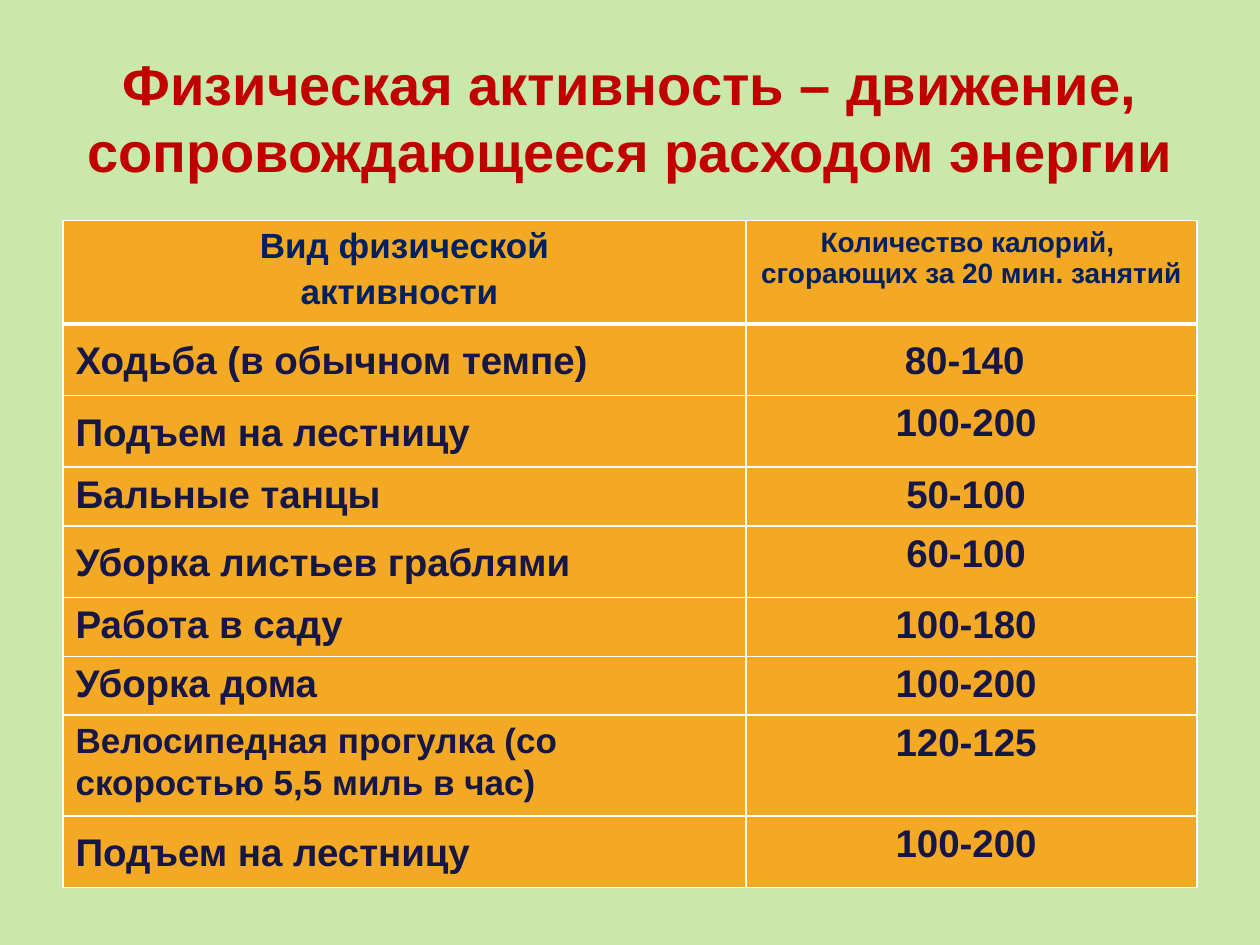
from pptx import Presentation
from pptx.dml.color import RGBColor as RGB
from pptx.enum.text import MSO_ANCHOR as Anchor, PP_ALIGN as Align
from pptx.oxml import parse_xml
from pptx.oxml.ns import nsdecls, qn
from pptx.util import Inches, Pt
from lxml.etree import SubElement

TITLE = "Физическая активность – движение, сопровождающееся расходом энергии"
HEADS = [
    ("Вид физической\nактивности ", 20),
    ("Количество калорий, \vсгорающих за 20 мин. занятий", 16),
]
ROWS = [
    ("Ходьба (в обычном темпе)", 22, 28, "80-140", 28),
    ("Подъем на лестницу", 22, 28, "100-200", 22),
    ("Бальные танцы", 22, None, "50-100", 22),
    ("Уборка листьев граблями", 22, 28, "60-100", 22),
    ("Работа в саду", 22, None, "100-180", 22),
    ("Уборка дома", 22, None, "100-200", 22),
    ("Велосипедная прогулка (со скоростью 5,5 миль в час)", 20, 22, "120-125", 22),
    ("Подъем на лестницу", 22, 28, "100-200", 22),
]
COLS = [5.42, 3.58]
HIGH = [0.78, 0.54, 0.53, 0.44, 0.53, 0.44, 0.44, 0.75, 0.54]
THEME = {
    "font": "Arial", "back": "CAE8AA", "title": "C00000", "head": "002060",
    "body": "171745", "fill": "FF9900", "alpha": 79, "line": "FFFFFF",
    "title_size": 32, "num_size": 22, "thin": 1, "thick": 3,
}


def style(run, size, color, bold=True):
    """Set the font of one run."""
    font = run.font
    font.name, font.size, font.bold = THEME["font"], Pt(size), bold
    font.color.rgb = RGB.from_string(color)


def write(frame, text, size, color, align, tail=None):
    """Fill a frame with text and an optional closing space."""
    frame.text = text
    for i, para in enumerate(frame.paragraphs):
        para.alignment = align
        if i:
            para.space_before = Pt(size * 0.2)
        for run in para.runs:
            style(run, size, color)
    if tail:
        end = frame.paragraphs[-1].add_run()
        end.text = " "
        style(end, tail, color, tail == size)


def paint(cell, head, below):
    """Give a cell its clear fill and its borders."""
    cell.fill.solid()
    cell.fill.fore_color.rgb = RGB.from_string(THEME["fill"])
    props = cell._tc.get_or_add_tcPr()
    tint = props.find(".//" + qn("a:srgbClr"))
    SubElement(tint, qn("a:alpha")).set("val", str(THEME["alpha"] * 1000))
    for i, side in enumerate("LRTB"):
        thick = (head and side == "B") or (below and side == "T")
        width = Pt(THEME["thick" if thick else "thin"])
        props.insert(i, parse_xml(
            f'<a:ln{side} {nsdecls("a")} w="{width}"><a:solidFill>'
            f'<a:srgbClr val="{THEME["line"]}"/></a:solidFill></a:ln{side}>'))


def main():
    """Build the slide and save it."""
    deck = Presentation()
    deck.slide_width, deck.slide_height = Inches(10), Inches(7.5)
    slide = deck.slides.add_slide(deck.slide_layouts[6])
    slide.background.fill.solid()
    slide.background.fill.fore_color.rgb = RGB.from_string(THEME["back"])

    box = slide.shapes.add_textbox(Inches(0.5), Inches(0.3), Inches(9), Inches(1.25))
    frame = box.text_frame
    frame.word_wrap, frame.vertical_anchor = True, Anchor.MIDDLE
    write(frame, TITLE, THEME["title_size"], THEME["title"], Align.CENTER)

    table = slide.shapes.add_table(
        len(HIGH), len(COLS), Inches(0.5), Inches(1.75),
        Inches(sum(COLS)), Inches(sum(HIGH))).table
    table.first_row = table.horz_banding = False
    for col, width in zip(table.columns, COLS):
        col.width = Inches(width)
    for row, high in zip(table.rows, HIGH):
        row.height = Inches(high)

    for c, (text, size) in enumerate(HEADS):
        write(table.cell(0, c).text_frame, text, size, THEME["head"], Align.CENTER)
    for r, (name, size, tail, count, end) in enumerate(ROWS, 1):
        left, right = (table.cell(r, c).text_frame for c in range(2))
        write(left, name, size, THEME["body"], Align.LEFT, tail)
        write(right, count, THEME["num_size"], THEME["body"], Align.CENTER, end)
    for r in range(len(HIGH)):
        for c in range(len(COLS)):
            cell = table.cell(r, c)
            cell.margin_left = cell.margin_right = Inches(0.1)
            cell.margin_top = cell.margin_bottom = Inches(0.05)
            paint(cell, r == 0, r == 1)

    deck.save("out.pptx")


if __name__ == "__main__":
    main()
